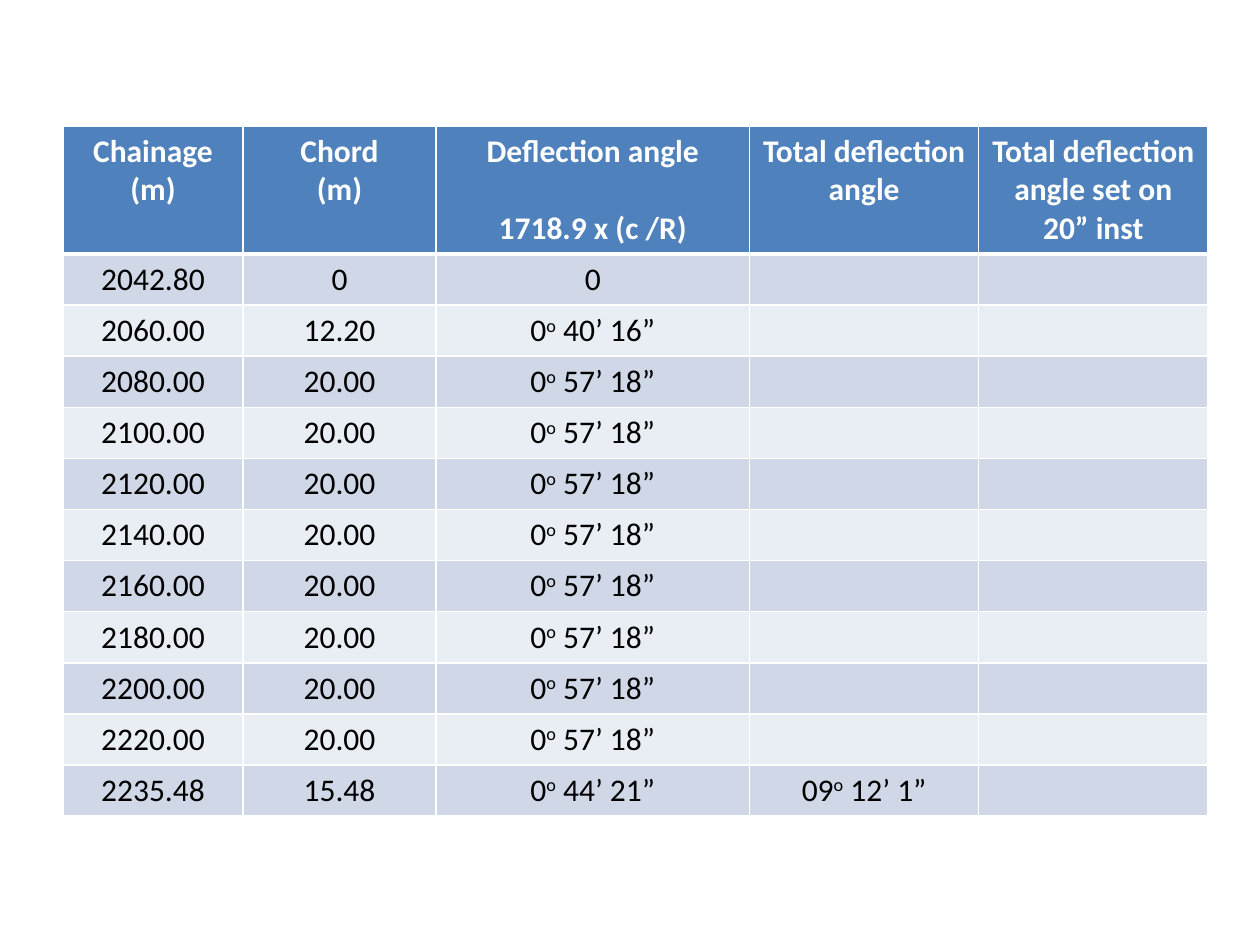
"""Build a slide with a table of deflection angles for setting out a curve."""
import pptx
import pptx.dml.color
import pptx.enum.text
import pptx.oxml
import pptx.oxml.ns
import pptx.util
from pptx.util import Cm

HEADS = [
    ["Chainage", "(m)"],
    ["Chord", "(m)"],
    ["Deflection angle", "1718.9 x (c /R)"],
    ["Total deflection angle"],
    ["Total deflection angle set on 20” inst"],
]
ROWS = [
    ("2042.80", "0", "0"),
    ("2060.00", "12.20", "0o 40’ 16”"),
    *[(f"{chain}.00", "20.00", "0o 57’ 18”") for chain in range(2080, 2240, 20)],
    ("2235.48", "15.48", "0o 44’ 21”", "09o 12’ 1”"),
]
WIDTHS = [3.63, 3.89, 6.32, 4.62, 4.62]
HEIGHT = 1.03
LEFT, TOP = 1.27, 2.54
BLUE, BANDS, LINE = "4F81BD", ["D0D8E8", "E9EDF4"], "FFFFFF"
FONT = {"name": "Calibri", "size": pptx.util.Pt(18)}
HEAD = {**FONT, "bold": True}
BODY = {**FONT, "bold": False}
GAP = pptx.util.Pt(22)


def color(code):
    return pptx.dml.color.RGBColor.from_string(code)


def edge(cell, **sides):
    props = cell._tc.get_or_add_tcPr()
    for side, width in sides.items():
        props.append(pptx.oxml.parse_xml(
            f'<a:ln{side} {pptx.oxml.ns.nsdecls("a")} w="{pptx.util.Pt(width)}">'
            f'<a:solidFill><a:srgbClr val="{LINE}"/></a:solidFill></a:ln{side}>'))


def paint(cell, code):
    cell.fill.solid()
    cell.fill.fore_color.rgb = color(code)


def write(para, text, look, ink, raised=False):
    para.alignment = pptx.enum.text.PP_ALIGN.CENTER
    run = para.add_run()
    run.text = text
    for key, value in look.items():
        setattr(run.font, key, value)
    run.font.color.rgb = color(ink)
    if raised:
        run._r.get_or_add_rPr().set("baseline", "30000")


def head(cell, lines):
    edge(cell, L=1, R=1, T=1, B=3)
    paint(cell, BLUE)
    frame = cell.text_frame
    for num, line in enumerate(lines):
        para = frame.add_paragraph() if num else frame.paragraphs[0]
        write(para, line, HEAD, "FFFFFF")
    if lines[-1].startswith("1718.9"):
        para.space_before = GAP


def body(cell, text, num):
    edge(cell, L=1, R=1, T=1 if num else 3, B=1)
    paint(cell, BANDS[num % 2])
    for part in text.partition("o"):
        if part:
            write(cell.text_frame.paragraphs[0], part, BODY, "000000", part == "o")


def main():
    deck = pptx.Presentation()
    deck.slide_width, deck.slide_height = Cm(25.4), Cm(19.05)
    slide = deck.slides.add_slide(deck.slide_layouts[6])
    count = len(ROWS) + 1
    table = slide.shapes.add_table(
        count, len(WIDTHS), Cm(LEFT), Cm(TOP),
        Cm(sum(WIDTHS)), Cm(HEIGHT * count)).table
    for col, width in zip(table.columns, WIDTHS):
        col.width = Cm(width)
    for row in table.rows:
        row.height = Cm(HEIGHT)
    for col, lines in enumerate(HEADS):
        head(table.cell(0, col), lines)
    for num, row in enumerate(ROWS):
        for col in range(len(WIDTHS)):
            text = row[col] if col < len(row) else ""
            body(table.cell(num + 1, col), text, num)
    deck.save("out.pptx")


if __name__ == "__main__":
    main()
